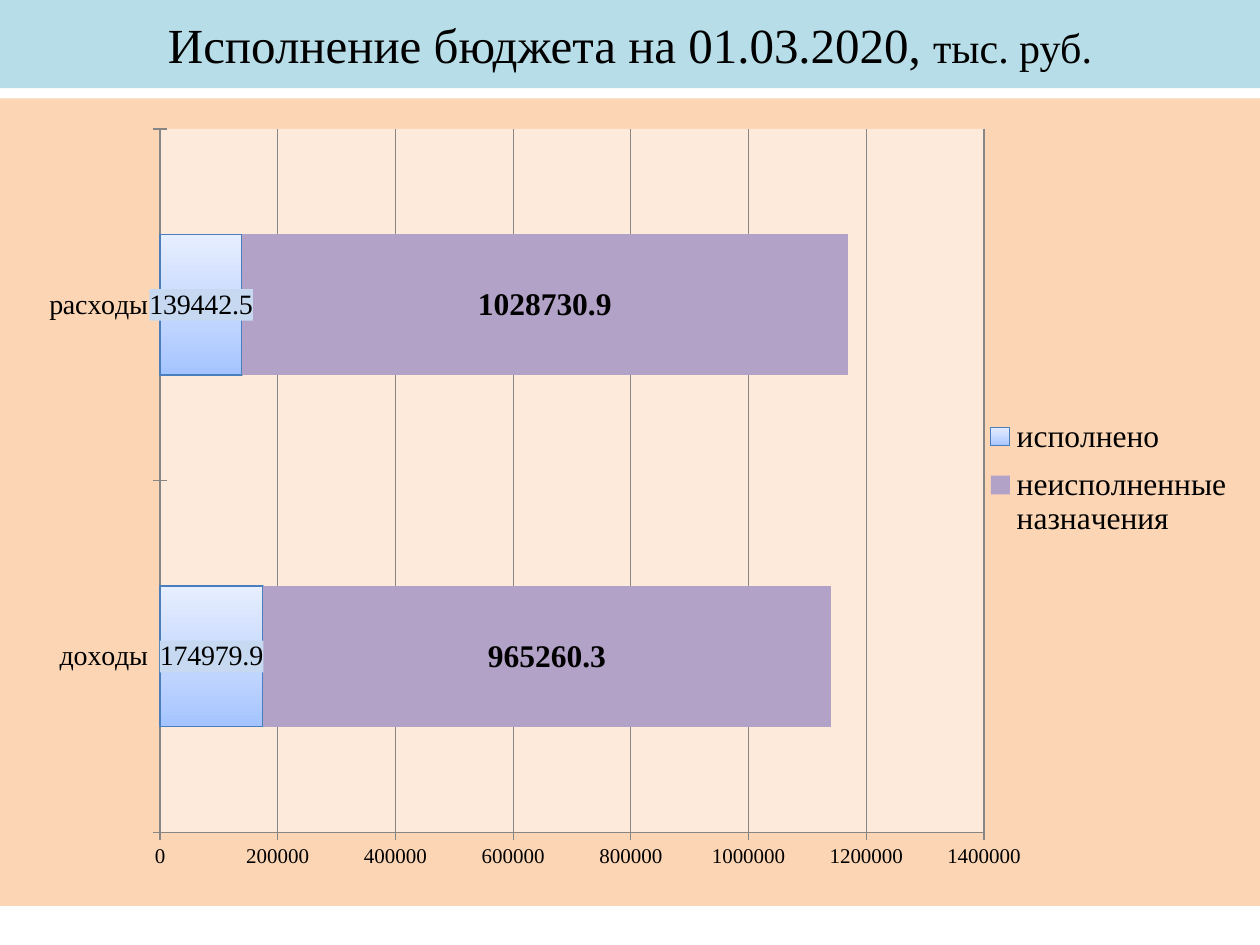
from dataclasses import dataclass

from lxml import etree
from pptx import Presentation
from pptx.chart.data import CategoryChartData
from pptx.dml.color import RGBColor
from pptx.enum import chart as kinds, text
from pptx.util import Inches, Pt

NS = {
    "c": "http://schemas.openxmlformats.org/drawingml/2006/chart",
    "a": "http://schemas.openxmlformats.org/drawingml/2006/main",
}


@dataclass(frozen=True)
class Theme:
    """Colours, font and type sizes of the slide."""
    font: str = "Times New Roman"
    ink: str = "000000"
    title_fill: str = "B7DEE8"
    chart_fill: str = "FCD5B5"
    plot_fill: str = "FDEADA"
    done_stops: tuple = ((0, "A4C4FF"), (35, "BFD4FF"), (100, "E6EEFF"))
    done_line: str = "4B7EBC"
    done_label: str = "C6D9F1"
    rest: str = "B3A2C7"
    grid: str = "868686"
    title: int = 28
    unit: int = 24
    large: int = 18
    label: int = 16
    small: int = 12


THEME = Theme()


def rgb(value):
    """Turn a hex string into a colour."""
    return RGBColor.from_string(value)


def style(font, size, bold=False):
    """Apply the theme face and ink to a font."""
    font.name, font.size, font.bold = THEME.font, Pt(size), bold
    font.color.rgb = rgb(THEME.ink)


def element(markup):
    """Build an XML element with the chart namespaces declared."""
    names = " ".join(f'xmlns:{key}="{uri}"' for key, uri in NS.items())
    head, tail = markup.split(">", 1)
    return etree.fromstring(f"{head} {names}>{tail}")


def solid(colour):
    """Return borderless shape properties with a solid fill."""
    return element(
        f'<c:spPr><a:solidFill><a:srgbClr val="{colour}"/></a:solidFill>'
        "<a:ln><a:noFill/></a:ln></c:spPr>")


def set_layout(parent, index, box, inner=False):
    """Fix the place of a chart part as fractions of the chart."""
    for old in parent.findall("c:layout", NS):
        parent.remove(old)
    target = '<c:layoutTarget val="inner"/>' if inner else ""
    modes = '<c:xMode val="edge"/><c:yMode val="edge"/>'
    sizes = "".join(f'<c:{key} val="{value}"/>' for key, value in zip("xywh", box))
    parent.insert(index, element(
        f"<c:layout><c:manualLayout>{target}{modes}{sizes}</c:manualLayout></c:layout>"))


def fill_gradient(series):
    """Give a series the upward gradient and its outline."""
    series.format.fill.solid()
    series.format.line.color.rgb = rgb(THEME.done_line)
    series.format.line.width = Pt(0.75)
    stops = "".join(
        f'<a:gs pos="{place * 1000}"><a:srgbClr val="{colour}"/></a:gs>'
        for place, colour in THEME.done_stops)
    properties = series.format.fill._xPr
    properties.replace(properties.find("a:solidFill", NS), element(
        f'<a:gradFill rotWithShape="1"><a:gsLst>{stops}</a:gsLst>'
        '<a:lin ang="16200000" scaled="1"/></a:gradFill>'))


def label_series(series, size, bold=False):
    """Show the values of a series and return its labels."""
    labels = series.data_labels
    labels.show_value = True
    style(labels.font, size, bold)
    return labels


def style_axis(axis, size):
    """Format one axis with crossing ticks."""
    axis.major_tick_mark = kinds.XL_TICK_MARK.CROSS
    axis.minor_tick_mark = kinds.XL_TICK_MARK.NONE
    axis.format.line.color.rgb = rgb(THEME.grid)
    style(axis.tick_labels.font, size)


def add_title(page, box):
    """Fill the title band."""
    title = page.shapes.title
    title.left, title.top, title.width, title.height = box
    title.fill.solid()
    title.fill.fore_color.rgb = rgb(THEME.title_fill)
    frame = title.text_frame
    frame.vertical_anchor = text.MSO_ANCHOR.MIDDLE
    para = frame.paragraphs[0]
    para.alignment = text.PP_ALIGN.CENTER
    for words, size in (("Исполнение бюджета на 01.03.2020, ", THEME.title),
                        ("тыс. руб.", THEME.unit)):
        span = para.add_run()
        span.text = words
        style(span.font, size)


def add_budget_chart(page, box):
    """Place the stacked bars of budget execution."""
    data = CategoryChartData()
    data.categories = ["доходы", "расходы"]
    data.add_series("исполнено", (174979.9, 139442.5))
    data.add_series("неисполненные назначения", (965260.3, 1028730.9))
    chart = page.shapes.add_chart(kinds.XL_CHART_TYPE.BAR_STACKED, *box, data).chart
    chart.has_title = False
    style(chart.font, THEME.large)

    plot = chart.plots[0]
    plot.gap_width, plot.overlap = 150, 100
    plot.vary_by_categories = False
    done, rest = plot.series
    fill_gradient(done)
    done_labels = label_series(done, THEME.label)
    done_labels.font._element.getparent().getparent().getparent().addprevious(
        solid(THEME.done_label))
    rest.format.fill.solid()
    rest.format.fill.fore_color.rgb = rgb(THEME.rest)
    label_series(rest, THEME.large, bold=True)

    style_axis(chart.category_axis, THEME.label)
    values = chart.value_axis
    style_axis(values, THEME.small)
    values.minimum_scale, values.maximum_scale = 0, 1400000
    values.major_unit = 200000
    values.has_major_gridlines = True
    values.major_gridlines.format.line.color.rgb = rgb(THEME.grid)

    chart.has_legend = True
    legend = chart.legend
    legend.position = kinds.XL_LEGEND_POSITION.RIGHT
    legend.include_in_layout = False
    style(legend.font, THEME.large)
    set_layout(legend._element, 1, (0.78, 0.38, 0.2, 0.18))

    space = chart._chartSpace
    area = space.find(".//c:plotArea", NS)
    set_layout(area, 0, (0.127, 0.038, 0.654, 0.871), inner=True)
    area.append(solid(THEME.plot_fill))
    space.find("c:chart", NS).addnext(solid(THEME.chart_fill))


def main():
    """Build and save the deck."""
    deck = Presentation()
    deck.slide_width, deck.slide_height = Inches(10), Inches(7.5)
    page = deck.slides.add_slide(deck.slide_layouts[5])
    add_title(page, (Inches(0), Inches(0), Inches(10), Inches(0.7)))
    add_budget_chart(page, (Inches(0), Inches(0.78), Inches(10), Inches(6.41)))
    deck.save("out.pptx")


if __name__ == "__main__":
    main()
